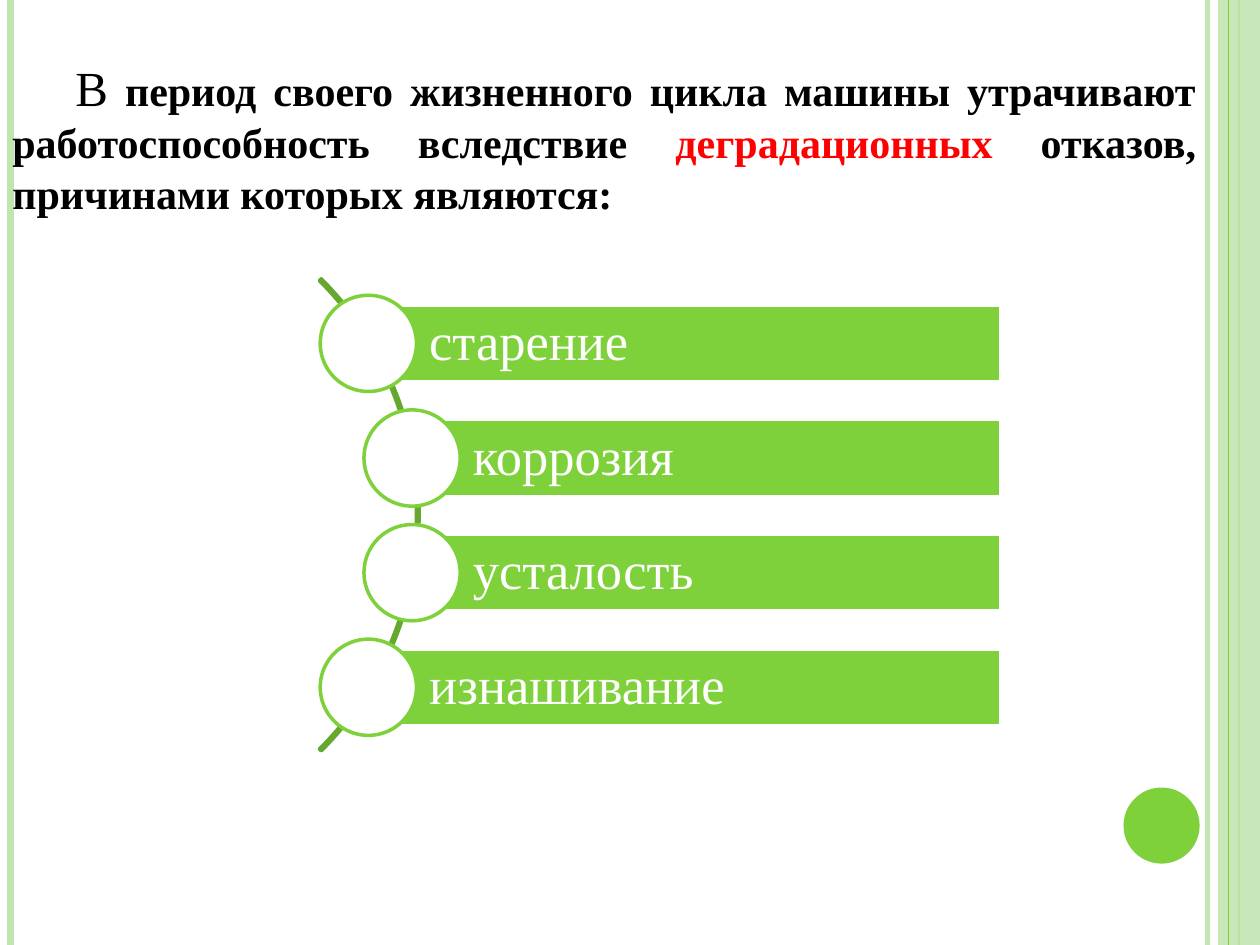
from pptx import Presentation
from pptx.dml.color import RGBColor
from pptx.enum.shapes import MSO_CONNECTOR, MSO_SHAPE
from pptx.enum.text import MSO_ANCHOR, PP_ALIGN
from pptx.oxml.ns import qn
from pptx.util import Pt
from lxml.etree import SubElement

GREEN = RGBColor(0x7F, 0xD1, 0x3B)
PALE_GREEN = RGBColor(0xC0, 0xE5, 0xAF)
DARK_GREEN = RGBColor(0x66, 0xA7, 0x2F)
WHITE = RGBColor(0xFF, 0xFF, 0xFF)
BLACK = RGBColor(0, 0, 0)
RED = RGBColor(0xFF, 0, 0)
SERIF = "Times New Roman"
SLIDE_WIDTH, SLIDE_HEIGHT = 720, 540

presentation = Presentation()
presentation.slide_width = Pt(SLIDE_WIDTH)
presentation.slide_height = Pt(SLIDE_HEIGHT)
slide = presentation.slides.add_slide(presentation.slide_layouts[6])
shapes = slide.shapes


def add_shape(kind, left, top, width, height, fill=None, line=None):
    shape = shapes.add_shape(kind, Pt(left), Pt(top), Pt(width), Pt(height))
    shape.shadow.inherit = False
    if fill is None:
        shape.fill.background()
    else:
        shape.fill.solid()
        shape.fill.fore_color.rgb = fill
    if line is None:
        shape.line.fill.background()
    else:
        shape.line.color.rgb = line
        shape.line.width = Pt(2)
    return shape


def set_opacity(element, percent):
    """Make the solid colour found inside an XML element partly transparent."""
    color = next(element.iter(qn("a:srgbClr")))
    SubElement(color, qn("a:alpha")).set("val", str(percent * 1000))


# Side decoration: the band lies above the first three stripes
band_left = 696
stripes = [(690, 3, PALE_GREEN), (6, 4.5, PALE_GREEN), (708, 1.5, GREEN), (702, 0.75, GREEN)]
for x, width, color in stripes:
    if width == 0.75:
        band = add_shape(MSO_SHAPE.RECTANGLE, band_left, 0,
                         SLIDE_WIDTH - band_left, SLIDE_HEIGHT, PALE_GREEN)
        set_opacity(band.fill.fore_color._xFill, 87)
    stripe = shapes.add_connector(MSO_CONNECTOR.STRAIGHT, Pt(x), 0, Pt(x), Pt(SLIDE_HEIGHT))
    stripe.line.color.rgb = color
    stripe.line.width = Pt(width)
    if width == 3:
        set_opacity(stripe.line._ln, 93)
    SubElement(stripe._element.spPr, qn("a:effectLst"))
add_shape(MSO_SHAPE.OVAL, 642, 450, 43.5, 43.5, GREEN)

# Introductory paragraph
intro = shapes.add_textbox(0, Pt(29.5), Pt(690.5), Pt(193.5))
intro.text_frame.word_wrap = True
paragraph = intro.text_frame.paragraphs[0]
paragraph.alignment = PP_ALIGN.JUSTIFY
tab_list = SubElement(paragraph._p.get_or_add_pPr(), qn("a:tabLst"))
tab = SubElement(tab_list, qn("a:tab"))
tab.set("pos", str(Pt(36)))
tab.set("algn", "l")
intro_runs = [
    ("\t", 28, False, BLACK, "Roboto Condensed"),
    ("В", 28, False, BLACK, SERIF),
    (" период своего жизненного цикла машины утрачивают работоспособность вследствие ",
     24, True, BLACK, SERIF),
    ("деградационных", 24, True, RED, SERIF),
    (" отказов, причинами которых являются: ", 24, True, BLACK, SERIF),
]
for text, size, bold, color, font_name in intro_runs:
    run = paragraph.add_run()
    run.text = text
    run.font.size = Pt(size)
    run.font.bold = bold
    run.font.color.rgb = color
    run.font.name = font_name

# Causes strung along an arc
arc = add_shape(MSO_SHAPE.BLOCK_ARC, -142, 103.5, 381.5, 381.5, line=DARK_GREEN)
for index, value in enumerate((189, 27, 0.004)):
    arc.adjustments[index] = value

causes = ["старение", "коррозия", "усталость", "изнашивание"]
bar_right, bar_height, circle_size = 572, 44, 55
first_center, pitch = 196.25, 65.5
for index, cause in enumerate(causes):
    center_x = 210.5 if index in (0, len(causes) - 1) else 235.5
    center_y = first_center + index * pitch
    bar = add_shape(MSO_SHAPE.RECTANGLE, center_x, center_y - bar_height / 2,
                    bar_right - center_x, bar_height, GREEN, WHITE)
    frame = bar.text_frame
    frame.text = cause
    frame.vertical_anchor = MSO_ANCHOR.MIDDLE
    frame.margin_left = Pt(34.75)
    frame.margin_top = frame.margin_right = frame.margin_bottom = Pt(6)
    paragraph = frame.paragraphs[0]
    paragraph.alignment = PP_ALIGN.LEFT
    paragraph.line_spacing = 0.9
    paragraph.font.size = Pt(30)
    paragraph.font.name = SERIF
    paragraph.font.color.rgb = WHITE
    add_shape(MSO_SHAPE.OVAL, center_x - circle_size / 2, center_y - circle_size / 2,
              circle_size, circle_size, WHITE, GREEN)

presentation.save("out.pptx")
